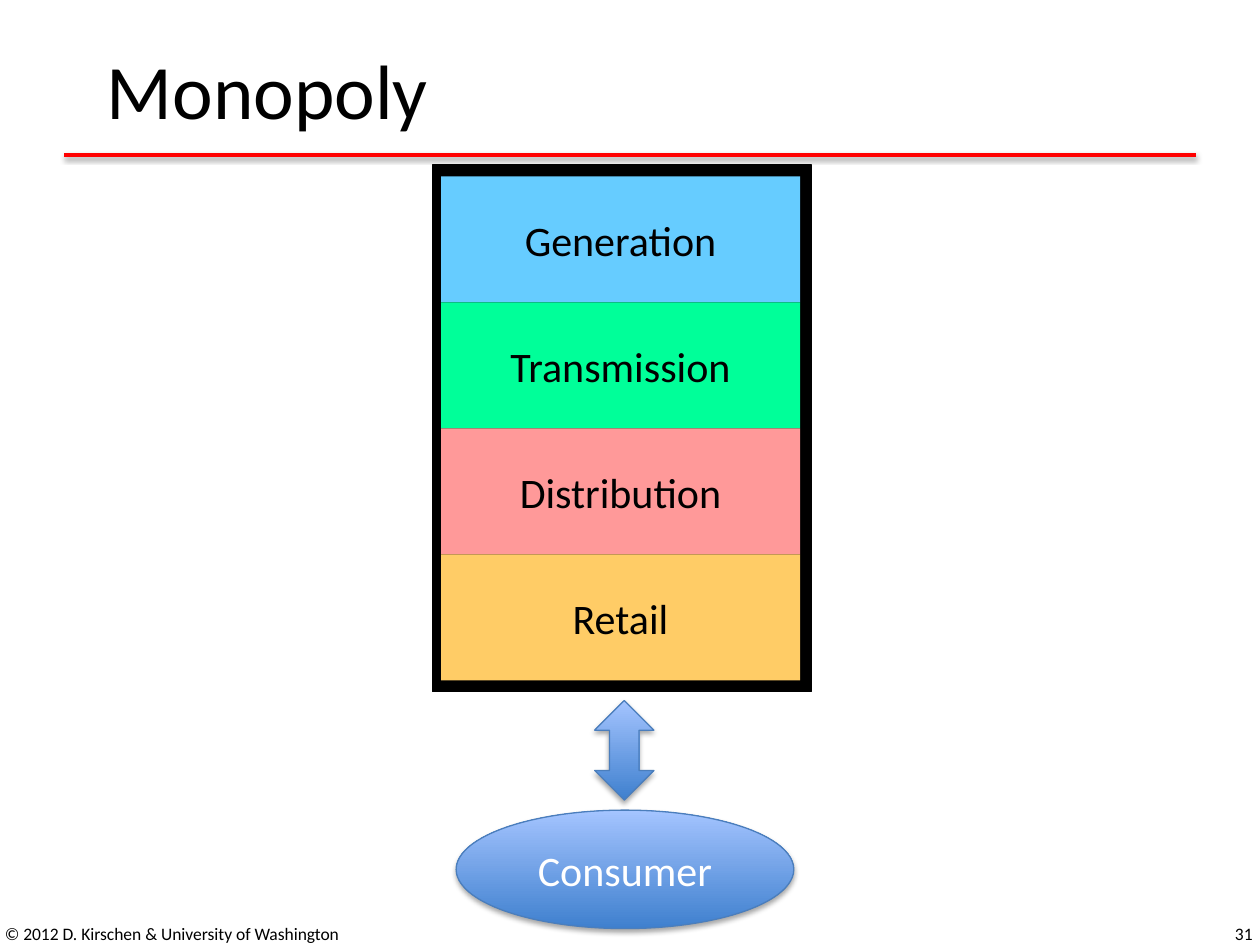
from lxml import etree
from pptx import Presentation
from pptx.dml.color import RGBColor
from pptx.enum.shapes import MSO_CONNECTOR, MSO_SHAPE
from pptx.enum.text import MSO_ANCHOR, PP_ALIGN
from pptx.oxml.ns import qn
from pptx.util import Inches, Pt

RECTANGLE = MSO_SHAPE.RECTANGLE
OVAL = MSO_SHAPE.OVAL
UP_DOWN_ARROW = MSO_SHAPE.UP_DOWN_ARROW
STRAIGHT = MSO_CONNECTOR.STRAIGHT
MIDDLE = MSO_ANCHOR.MIDDLE
LEFT, CENTER, RIGHT = PP_ALIGN.LEFT, PP_ALIGN.CENTER, PP_ALIGN.RIGHT

BLACK = RGBColor(0x00, 0x00, 0x00)
WHITE = RGBColor(0xFF, 0xFF, 0xFF)
RED = RGBColor(0xFF, 0x00, 0x00)
SKY = RGBColor(0x66, 0xCC, 0xFF)
GREEN = RGBColor(0x00, 0xFF, 0x99)
PINK = RGBColor(0xFF, 0x99, 0x99)
AMBER = RGBColor(0xFF, 0xCC, 0x66)
DARK_BLUE = RGBColor(0x3F, 0x80, 0xCE)
LIGHT_BLUE = RGBColor(0xA4, 0xC4, 0xFF)
EDGE_BLUE = RGBColor(0x4B, 0x7E, 0xBC)

FONT = "Calibri"
STAGES = [("Generation", SKY), ("Transmission", GREEN),
          ("Distribution", PINK), ("Retail", AMBER)]
STAGE_LEFT, STAGE_TOP, STAGE_WIDTH, STAGE_HEIGHT = 3.5, 1.4, 2.85, 1


def write(shape, text, size, color=BLACK, align=LEFT):
    """Put one formatted, vertically centred line of text in a shape."""
    frame = shape.text_frame
    frame.word_wrap = True
    frame.vertical_anchor = MIDDLE
    para = frame.paragraphs[0]
    para.alignment = align
    span = para.add_run()
    span.text = text
    for name, value in {"name": FONT, "size": Pt(size)}.items():
        setattr(span.font, name, value)
    span.font.color.rgb = color


def add_text(page, place, text, size, align=LEFT):
    """Add a text box at left, top, width, height in inches."""
    box = page.shapes.add_textbox(*map(Inches, place))
    write(box, text, size, align=align)


def add_flat(shapes, kind, place):
    """Add a preset shape without a shadow."""
    shape = shapes.add_shape(kind, *map(Inches, place))
    shape.shadow.inherit = False
    return shape


def set_line(line, color, width):
    """Set the colour and width of a line."""
    line.color.rgb = color
    line.width = Pt(width)


def add_shadow(effects, blur, distance, opacity):
    """Append a downward black shadow to an effect list."""
    shadow = etree.SubElement(effects, qn("a:outerShdw"), {
        "blurRad": str(Pt(blur)), "dist": str(Pt(distance)),
        "dir": "5400000", "rotWithShape": "0"})
    color = etree.SubElement(shadow, qn("a:srgbClr"), val=str(BLACK))
    etree.SubElement(color, qn("a:alpha"), val=str(opacity * 1000))


def add_rule(page):
    """Add the shadowed red line under the title."""
    rule = page.shapes.add_connector(
        STRAIGHT, Inches(0.51), Inches(1.23), Inches(9.49), Inches(1.23))
    set_line(rule.line, RED, 2)
    effects = etree.SubElement(rule._element.spPr, qn("a:effectLst"))
    add_shadow(effects, 3.1, 1.6, 38)


def add_stack(page):
    """Add the grouped stack of stages on its black frame."""
    group = page.shapes.add_group_shape()
    frame = add_flat(group.shapes, RECTANGLE, (3.43, 1.31, 3.01, 4.18))
    frame.fill.solid()
    frame.fill.fore_color.rgb = BLACK
    set_line(frame.line, BLACK, 0.75)
    for index, (label, color) in enumerate(STAGES):
        top = STAGE_TOP + index * STAGE_HEIGHT
        stage = add_flat(group.shapes, RECTANGLE,
                         (STAGE_LEFT, top, STAGE_WIDTH, STAGE_HEIGHT))
        stage.fill.solid()
        stage.fill.fore_color.rgb = color
        stage.line.fill.background()
        write(stage, label, 24, align=CENTER)


def add_glossy(page, kind, place):
    """Add a shape with a blue gradient and a soft shadow."""
    shape = add_flat(page.shapes, kind, place)
    shape.fill.gradient()
    shape.fill.gradient_angle = 90
    for stop, color in zip(shape.fill.gradient_stops, (DARK_BLUE, LIGHT_BLUE)):
        stop.color.rgb = color
    set_line(shape.line, EDGE_BLUE, 0.75)
    add_shadow(shape._element.spPr.find(qn("a:effectLst")), 3.1, 1.8, 35)
    return shape


def main():
    """Build the monopoly slide and save it."""
    deck = Presentation()
    deck.slide_width, deck.slide_height = Inches(10), Inches(7.5)
    page = deck.slides.add_slide(deck.slide_layouts[6])
    add_rule(page)
    add_text(page, (0.75, 0.08, 8.5, 1.25), "Monopoly", 44)
    add_text(page, (-0.06, 7.21, 2.94, 0.4),
             "© 2012 D. Kirschen & University of Washington", 10)
    add_text(page, (7.71, 7.21, 2.33, 0.4), "31", 10, RIGHT)
    add_stack(page)
    consumer = add_glossy(page, OVAL, (3.62, 6.43, 2.68, 0.94))
    write(consumer, "Consumer", 24, WHITE, CENTER)
    add_glossy(page, UP_DOWN_ARROW, (4.72, 5.56, 0.47, 0.79))
    deck.save("out.pptx")


if __name__ == "__main__":
    main()
